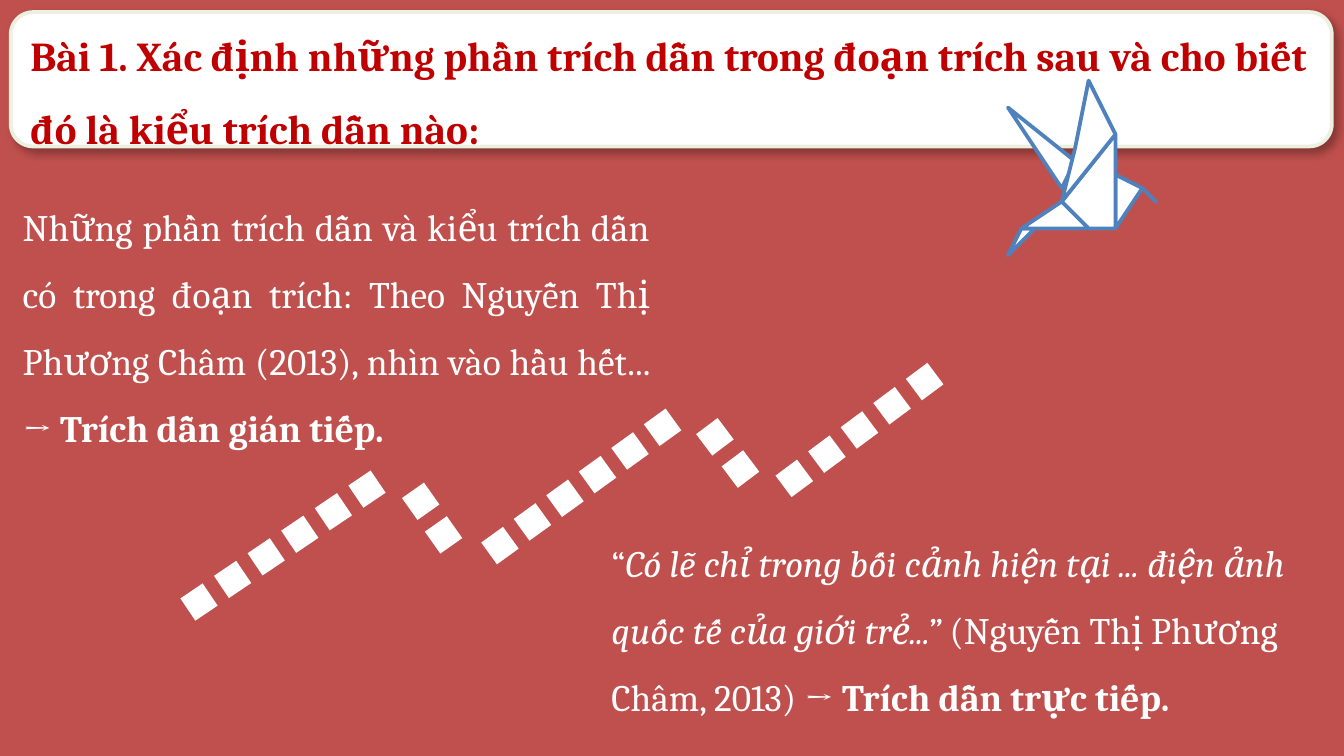
from lxml.etree import SubElement
from pptx import Presentation
from pptx.dml.color import RGBColor
from pptx.enum.shapes import MSO_SHAPE
from pptx.enum.text import MSO_ANCHOR, MSO_AUTO_SIZE, PP_ALIGN
from pptx.oxml.ns import qn
from pptx.util import Inches, Pt

COLORS = {"red": "C0504D", "white": "FFFFFF", "cream": "EBF1DE",
          "dark_red": "C00000", "blue": "4F81BD", "black": "000000"}
COLUMNS, ROWS = 100, 56.25

# Dashed trail: first square, last square, number of squares, rotation
TRAIL = [
    ((13.8, 43.8), (26.3, 35.4), 6, 56),
    ((30.3, 36.3), (32, 38.8), 2, 144.8),
    ((36.2, 39.6), (48.3, 30.8), 6, 54.1),
    ((52.2, 31.5), (54.1, 33.9), 2, 323),
    ((58.1, 34.6), (67.8, 27.4), 5, 53.3),
]

# Paper crane: corners of each fold
CRANE = [
    [(76.8, 17), (75.1, 18.7), (75.7, 17.2)],
    [(75.7, 17.2), (79.2, 15.2), (80.6, 16.9)],
    [(85.3, 13.9), (86.4, 14.7), (84.7, 14.5)],
    [(83.1, 13.2), (85.3, 13.9), (82.9, 16.7)],
    [(75.3, 8.4), (80.1, 11.5), (79.3, 14.5)],
    [(80.6, 16.9), (82.9, 16.7), (83.4, 10.4), (79.1, 15.3)],
    [(83.4, 10.5), (81.1, 6), (80.1, 10.65), (79.1, 15.3)],
]


class SlideBuilder:
    font = "Cambria"
    line_width = Pt(2)

    def __init__(self, prs):
        self.slide = prs.slides.add_slide(prs.slide_layouts[6])
        self.shapes = self.slide.shapes
        self.column = prs.slide_width / COLUMNS
        self.row = prs.slide_height / ROWS

    def color(self, name):
        return RGBColor.from_string(COLORS[name])

    def box(self, left, top, width, height):
        return (round(left * self.column), round(top * self.row),
                round(width * self.column), round(height * self.row))

    def background(self, name):
        fill = self.slide.background.fill
        fill.solid()
        fill.fore_color.rgb = self.color(name)

    def style(self, sp, fill, line=None):
        sp.shadow.inherit = False
        sp.fill.solid()
        sp.fill.fore_color.rgb = self.color(fill)
        if line:
            sp.line.color.rgb = self.color(line)
            sp.line.width = self.line_width
        else:
            sp.line.fill.background()

    def trail(self, segments, size=2):
        group = self.shapes.add_group_shape()
        for (x1, y1), (x2, y2), count, rotation in segments:
            for i in range(count):
                t = i / (count - 1)
                at = self.box(x1 + t * (x2 - x1), y1 + t * (y2 - y1), size, size)
                sp = group.shapes.add_shape(MSO_SHAPE.RECTANGLE, *at)
                sp.rotation = rotation
                self.style(sp, "white")

    def crane(self, folds):
        group = self.shapes.add_group_shape()
        for start, *rest in folds:
            builder = group.shapes.build_freeform(*start, scale=(self.column, self.row))
            builder.add_line_segments(rest, close=True)
            self.style(builder.convert_to_shape(), "white", "blue")

    def card(self, at, runs, **formats):
        sp = self.shapes.add_shape(MSO_SHAPE.ROUNDED_RECTANGLE, *self.box(*at))
        self.style(sp, "white", "cream")
        effects = sp.element.spPr.find(qn("a:effectLst"))
        shadow = SubElement(effects, qn("a:outerShdw"), blurRad=str(Pt(4.5)),
                            dist=str(Pt(2.6)), dir=str(53 * 60000), rotWithShape="0")
        black = SubElement(shadow, qn("a:srgbClr"), val=COLORS["black"])
        SubElement(black, qn("a:alpha"), val="30000")
        sp.text_frame.vertical_anchor = MSO_ANCHOR.MIDDLE
        self.paragraph(sp.text_frame, runs, **formats)

    def text(self, at, runs, **formats):
        tf = self.shapes.add_textbox(*self.box(*at)).text_frame
        tf.auto_size = MSO_AUTO_SIZE.SHAPE_TO_FIT_TEXT
        self.paragraph(tf, runs, **formats)

    def paragraph(self, tf, runs, size=20, color="white", indent=0, **formats):
        tf.word_wrap = True
        p = tf.paragraphs[0]
        for name, value in {"alignment": PP_ALIGN.LEFT, "line_spacing": 1.5, **formats}.items():
            setattr(p, name, value)
        if indent:
            p._p.get_or_add_pPr().set("marL", str(round(indent * self.column)))
        for words, extra in runs:
            r = p.add_run()
            r.text = words
            r.font.color.rgb = self.color(color)
            for name, value in {"name": self.font, "size": Pt(size), **extra}.items():
                setattr(r.font, name, value)


def main():
    prs = Presentation()
    prs.slide_width, prs.slide_height = Inches(10), Inches(5.625)
    s = SlideBuilder(prs)
    bold, italic = {"bold": True}, {"italic": True}

    s.background("red")
    s.trail(TRAIL)

    # Exercise title
    s.card((0.8, 0.9, 98.3, 10), [
        ("Bài 1. Xác định những phần trích dẫn trong đoạn trích sau "
         "và cho biết đó là kiểu trích dẫn nào:", bold),
    ], size=22, color="dark_red")
    s.crane(CRANE)

    # Indirect quotation
    s.text((0.4, 13, 48.9, 21.2), [
        ("Những phần trích dẫn và kiểu trích dẫn có trong đoạn trích: "
         "Theo Nguyễn Thị Phương Châm (2013), nhìn vào hầu hết... → ", {}),
        ("Trích dẫn gián tiếp.", bold),
    ], indent=0.3, alignment=PP_ALIGN.JUSTIFY, space_after=Pt(12))

    # Direct quotation
    s.text((44.5, 38, 52.5, 16.2), [
        ("“", {}),
        ("Có lẽ chỉ trong bối cảnh hiện tại ... điện ảnh quốc tế của giới trẻ...” ", italic),
        ("(Nguyễn Thị Phương Châm, 2013) → ", {}),
        ("Trích dẫn trực tiếp.", bold),
    ])

    prs.save("out.pptx")


if __name__ == "__main__":
    main()
